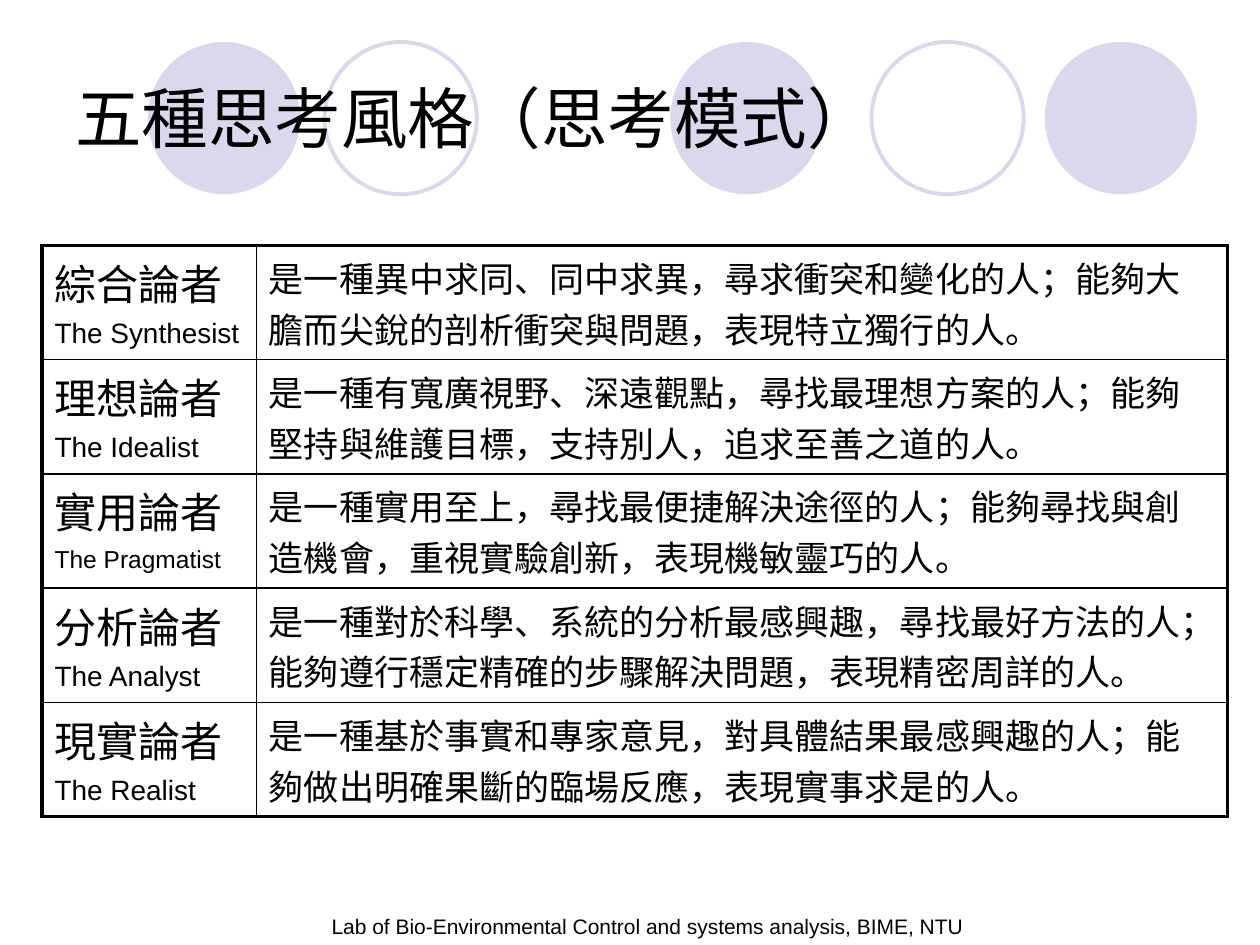
from lxml.etree import SubElement
from pptx import Presentation
from pptx.dml.color import RGBColor
from pptx.enum.shapes import MSO_SHAPE
from pptx.enum.text import MSO_ANCHOR, PP_ALIGN
from pptx.oxml.ns import qn
from pptx.util import Pt

BLACK = RGBColor(0x00, 0x00, 0x00)
LAVENDER = RGBColor(0xD9, 0xD8, 0xEC)

STYLES = [
    ("綜合論者", "The Synthesist", 16,
     "是一種異中求同、同中求異，尋求衝突和變化的人；能夠大膽而尖銳的剖析衝突與問題，表現特立獨行的人。"),
    ("理想論者", "The Idealist", 16,
     "是一種有寬廣視野、深遠觀點，尋找最理想方案的人；能夠堅持與維護目標，支持別人，追求至善之道的人。"),
    ("實用論者", "The Pragmatist", 14,
     "是一種實用至上，尋找最便捷解決途徑的人；能夠尋找與創造機會，重視實驗創新，表現機敏靈巧的人。"),
    ("分析論者", "The Analyst", 16,
     "是一種對於科學、系統的分析最感興趣，尋找最好方法的人；能夠遵行穩定精確的步驟解決問題，表現精密周詳的人。"),
    ("現實論者", "The Realist", 16,
     "是一種基於事實和專家意見，對具體結果最感興趣的人；能夠做出明確果斷的臨場反應，表現實事求是的人。"),
]


def write_text(paragraph, text, size, align=PP_ALIGN.LEFT, space_before=0):
    paragraph.alignment = align
    paragraph.space_before = Pt(space_before)
    run = paragraph.add_run()
    run.text = text
    run.font.size = Pt(size)
    run.font.name = "Arial"
    run.font.color.rgb = BLACK


def set_border(cell, side, width):
    line = SubElement(cell._tc.get_or_add_tcPr(), qn(f"a:{side}"), w=str(Pt(width)))
    fill = SubElement(line, qn("a:solidFill"))
    SubElement(fill, qn("a:srgbClr"), val=str(BLACK))


presentation = Presentation()
presentation.slide_width = Pt(720)
presentation.slide_height = Pt(540)
slide = presentation.slides.add_slide(presentation.slide_layouts[6])

for left, filled in [(383, True), (597, True), (84.5, True), (498, False), (185.5, False)]:
    circle = slide.shapes.add_shape(MSO_SHAPE.OVAL, Pt(left), Pt(24), Pt(87), Pt(87))
    circle.shadow.inherit = False
    if filled:
        circle.fill.solid()
        circle.fill.fore_color.rgb = LAVENDER
        circle.line.fill.background()
    else:
        circle.fill.background()
        circle.line.color.rgb = LAVENDER
        circle.line.width = Pt(2.25)

for text, size, left, top, width, height, anchor, align in [
    ("Lab of Bio-Environmental Control and systems analysis, BIME, NTU", 12,
     162, 492, 396, 48, MSO_ANCHOR.BOTTOM, PP_ALIGN.RIGHT),
    ("五種思考風格（思考模式）", 38, 36, 21.6, 648, 90, MSO_ANCHOR.MIDDLE, PP_ALIGN.LEFT),
]:
    box = slide.shapes.add_textbox(Pt(left), Pt(top), Pt(width), Pt(height))
    box.text_frame.word_wrap = True
    box.text_frame.vertical_anchor = anchor
    write_text(box.text_frame.paragraphs[0], text, size, align=align)

row_height = 65.3
table = slide.shapes.add_table(
    len(STYLES), 2, Pt(24), Pt(140.2), Pt(677.5), Pt(row_height * len(STYLES))
).table
table.first_row = False
table.horz_banding = False
table.columns[0].width = Pt(122.5)
table.columns[1].width = Pt(555)

for row, (name, english_name, english_size, description) in enumerate(STYLES):
    table.rows[row].height = Pt(row_height)
    name_cell = table.cell(row, 0)
    description_cell = table.cell(row, 1)
    write_text(name_cell.text_frame.paragraphs[0], name, 24)
    write_text(name_cell.text_frame.add_paragraph(), english_name, english_size,
               space_before=english_size * 0.2)
    write_text(description_cell.text_frame.paragraphs[0], description, 20)
    for column, cell in enumerate((name_cell, description_cell)):
        outer_sides = {
            "lnL": column == 0,
            "lnR": column == 1,
            "lnT": row == 0,
            "lnB": row == len(STYLES) - 1,
        }
        for side, is_outer in outer_sides.items():
            set_border(cell, side, 2.25 if is_outer else 1)
        cell.fill.background()

presentation.save("out.pptx")
